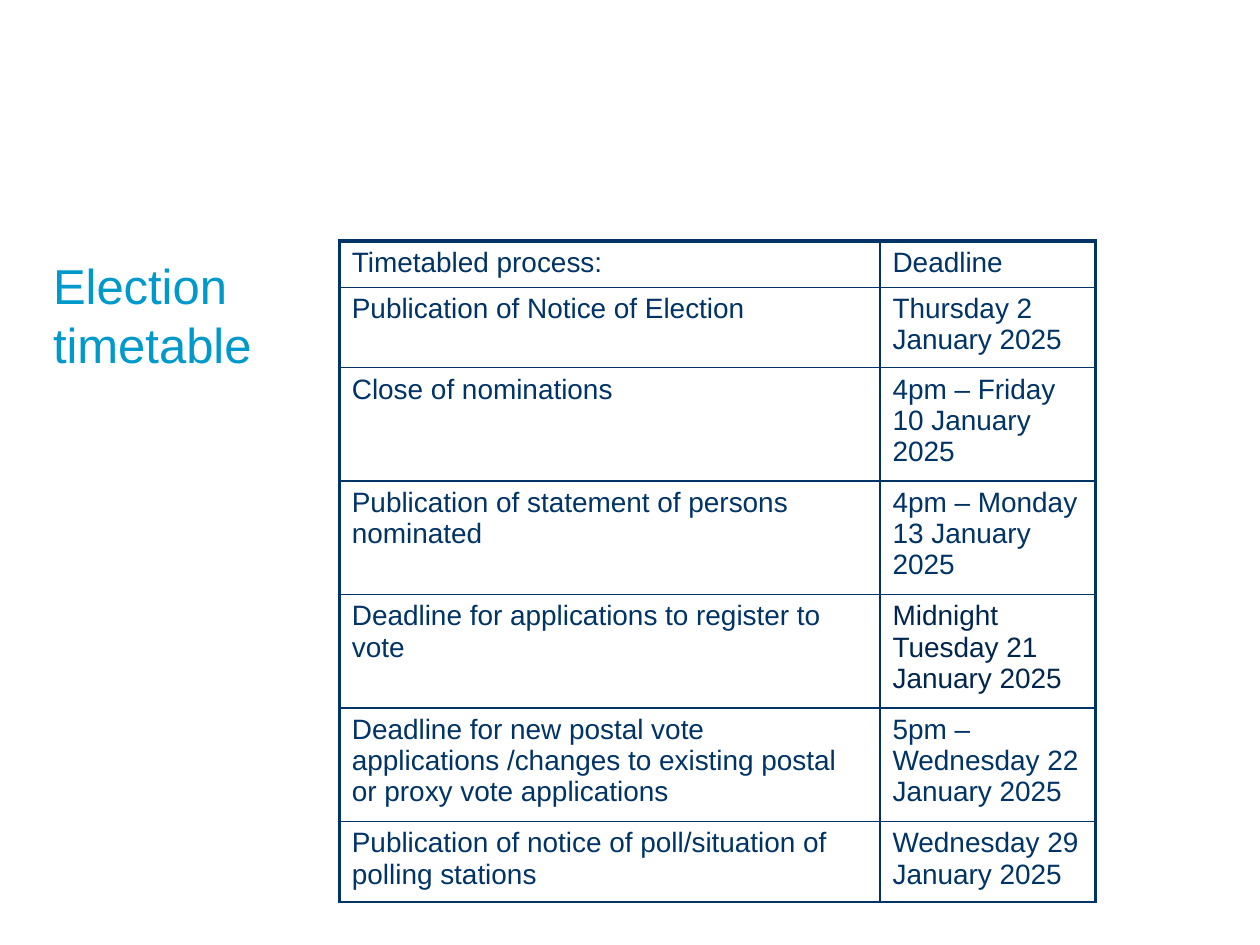
from lxml.etree import SubElement
from pptx import Presentation
from pptx.dml.color import RGBColor as Color
from pptx.enum.text import MSO_ANCHOR as Anchor
from pptx.oxml.ns import qn
from pptx.util import Cm, Pt

NAVY = RGBNAVY = Color(0x00, 0x33, 0x66)
DARK_NAVY = Color(0x00, 0x26, 0x4D)
CYAN = Color(0x00, 0x99, 0xCC)

HEADINGS = ("Timetabled process:", "Deadline")
TIMETABLE = [
    ("Publication of Notice of Election", "Thursday 2 January 2025"),
    ("Close of nominations", "4pm – Friday 10 January 2025"),
    ("Publication of statement of persons nominated", "4pm – Monday 13 January 2025"),
    ("Deadline for applications to register to vote", "Midnight Tuesday 21 January 2025"),
    ("Deadline for new postal vote applications /changes to existing postal "
     "or proxy vote applications", "5pm – Wednesday 22 January 2025"),
    ("Publication of notice of poll/situation of polling stations",
     "Wednesday 29 January 2025"),
]
COLUMN_WIDTHS = (10.9, 4.34)
ROW_HEIGHTS = (0.87, 1.62, 1.62, 1.62, 1.62, 2.29, 1.62)


class SlideBuilder:
    font_name = "Arial"
    thin, thick = Pt(1), Pt(2.25)

    def __init__(self, page):
        self.page = page

    def format_text(self, frame, size, color):
        frame.word_wrap = True
        for para in frame.paragraphs:
            for span in para.runs:
                span.font.name = self.font_name
                span.font.size = Pt(size)
                span.font.color.rgb = color

    def title(self, text, left, top, width, height):
        box = self.page.shapes.add_textbox(Cm(left), Cm(top), Cm(width), Cm(height))
        frame = box.text_frame
        frame.margin_left = frame.margin_right = 0
        frame.margin_top = frame.margin_bottom = 0
        frame.vertical_anchor = Anchor.TOP
        frame.text = text
        self.format_text(frame, 28, CYAN)

    def borders(self, cell, **widths):
        properties = cell._tc.get_or_add_tcPr()
        for side in "LRTB":
            line = SubElement(properties, qn(f"a:ln{side}"), w=str(widths.get(side, self.thin)))
            fill = SubElement(line, qn("a:solidFill"))
            SubElement(fill, qn("a:srgbClr"), val=str(NAVY))

    def table(self, rows, left, top, column_widths, row_heights, accents):
        frame = self.page.shapes.add_table(
            len(rows), len(column_widths), Cm(left), Cm(top),
            Cm(sum(column_widths)), Cm(sum(row_heights)))
        table = frame.table
        table.first_row = table.horz_banding = False
        for column, width in zip(table.columns, column_widths):
            column.width = Cm(width)
        for row, height in zip(table.rows, row_heights):
            row.height = Cm(height)
        for row_index, texts in enumerate(rows):
            for column_index, text in enumerate(texts):
                cell = table.cell(row_index, column_index)
                cell.text_frame.text = text
                self.format_text(cell.text_frame, 16, accents.get(text, NAVY))
                outer = {"L" if column_index == 0 else "R": self.thick}
                if row_index == 0:
                    outer["T"] = self.thick
                self.borders(cell, **outer)
                cell.fill.background()


def main():
    deck = Presentation()
    deck.slide_width, deck.slide_height = Cm(25.4), Cm(19.05)
    builder = SlideBuilder(deck.slides.add_slide(deck.slide_layouts[6]))
    builder.title("Election timetable", 1.07, 5.15, 6.98, 11.8)
    builder.table([HEADINGS, *TIMETABLE], 6.84, 4.86, COLUMN_WIDTHS, ROW_HEIGHTS,
                  {"Midnight Tuesday 21 January 2025": DARK_NAVY})
    deck.save("out.pptx")


if __name__ == "__main__":
    main()
